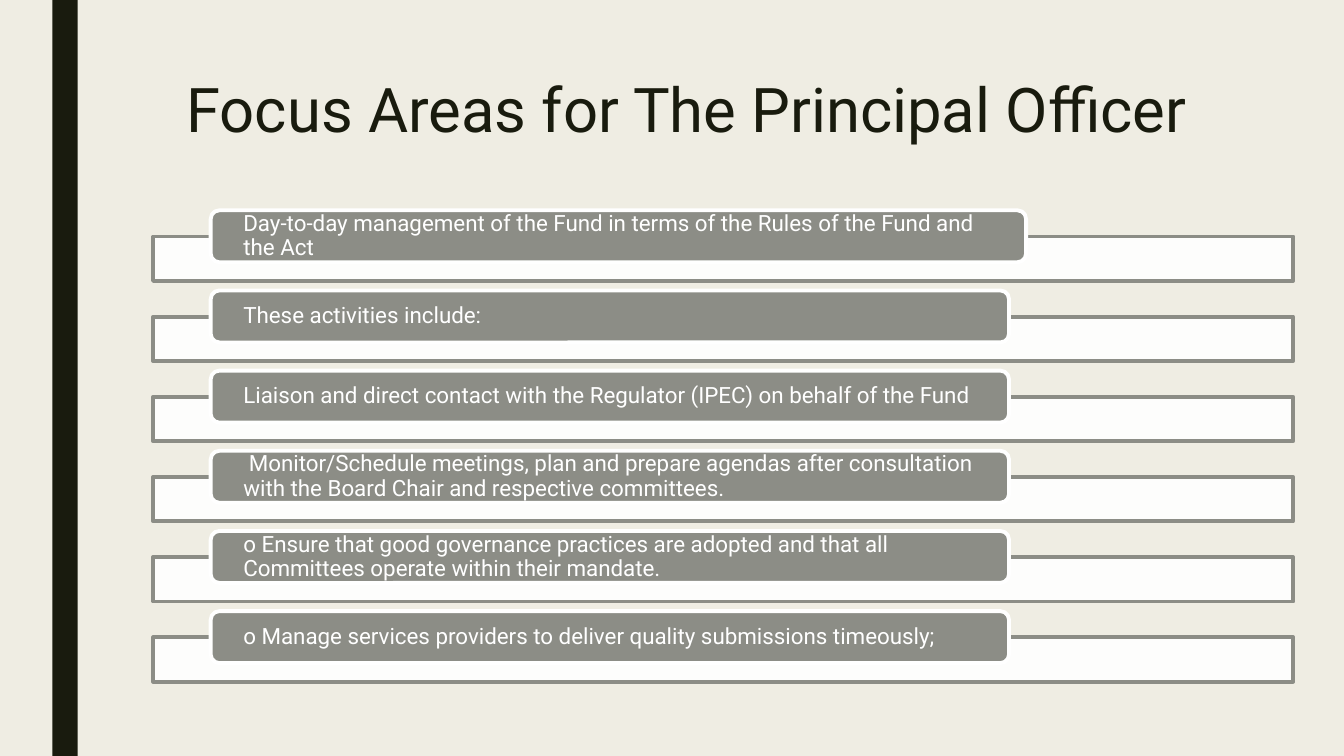
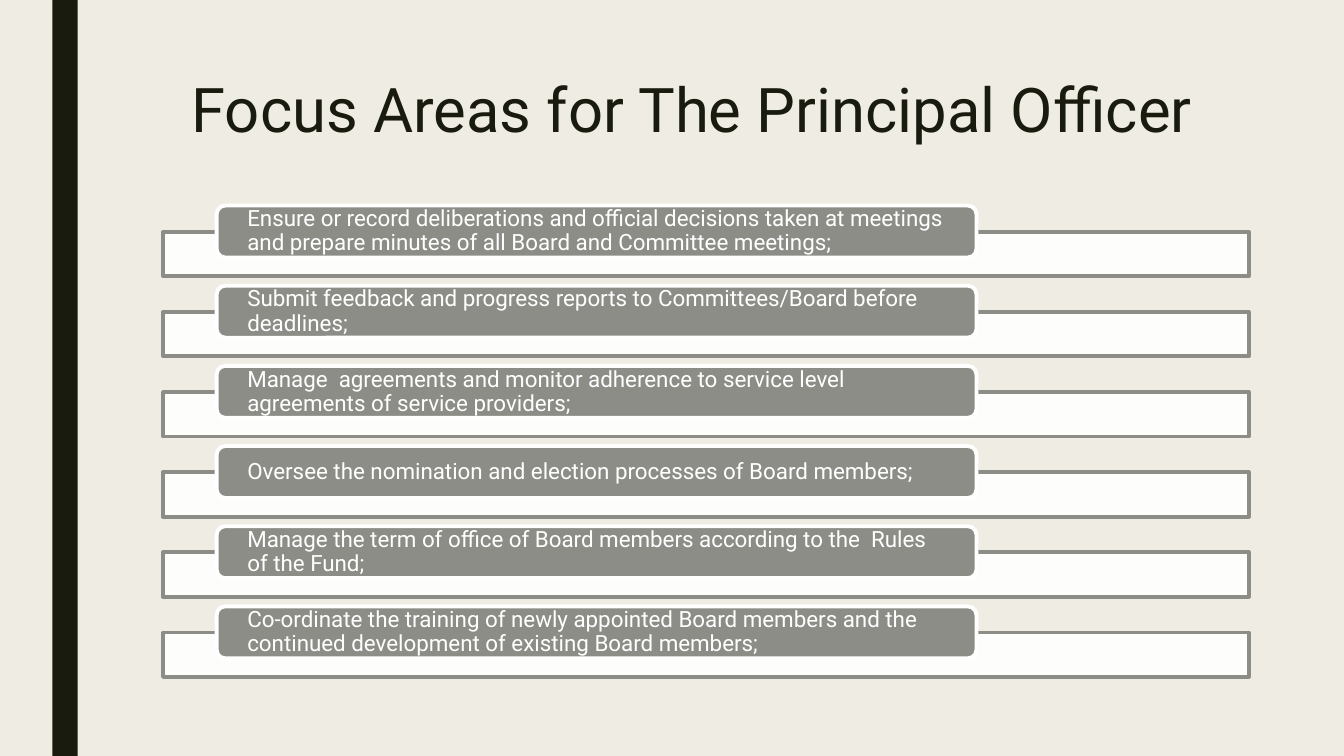
"""Build two slides listing the focus areas of the Principal Officer."""
from dataclasses import dataclass

from lxml.etree import SubElement
from pptx import Presentation
from pptx.dml.color import RGBColor
from pptx.enum.shapes import MSO_SHAPE as Preset
from pptx.enum.text import MSO_ANCHOR as Anchor, PP_ALIGN as Align
from pptx.oxml.ns import qn
from pptx.util import Cm, Pt

FONT = "Roboto"
CREAM, DARK, GRAY, WHITE = "EFEDE3", "191B0E", "8C8D86", "FFFFFF"
PAGE_WIDTH, PAGE_HEIGHT = 33.87, 19.05
ROW_PITCH, BAR_HEIGHT = 2.02, 1.12
LABEL_HEIGHT, LABEL_RISE = 1.31, 0.66
OUTLINE = 2.75
TITLE = "Focus Areas for The Principal Officer"


@dataclass(frozen=True)
class Box:
    left: float
    top: float
    width: float
    height: float

    def lengths(self):
        return [Cm(value) for value in (self.left, self.top, self.width, self.height)]


@dataclass(frozen=True)
class Row:
    text: str
    label_width: float


@dataclass(frozen=True)
class FocusPage:
    title_box: Box
    title_align: Align
    first_bar: Box
    label_left: float
    label_inset: float
    rows: tuple[Row, ...]


PAGES = (
    FocusPage(
        title_box=Box(4.45, 1.9, 26.04, 3.05),
        title_align=Align.LEFT,
        first_bar=Box(3.86, 5.96, 28.73, BAR_HEIGHT),
        label_left=5.31,
        label_inset=0.76,
        rows=(
            Row("Day-to-day management of the Fund in terms of the Rules of the Fund and the Act", 20.55),
            Row("These activities include:", 20.12),
            Row("Liaison and direct contact with the Regulator (IPEC) on behalf of the Fund", 20.12),
            Row(" Monitor/Schedule meetings, plan and prepare agendas after consultation "
                "with the Board Chair and respective committees.", 20.12),
            Row("o Ensure that good governance practices are adopted and that all "
                "Committees operate within their mandate.", 20.12),
            Row("o Manage services providers to deliver quality submissions timeously;", 20.12),
        ),
    ),
    FocusPage(
        title_box=Box(4.42, 1.9, 26.06, 2.29),
        title_align=Align.CENTER,
        first_bar=Box(4.11, 5.84, 27.36, BAR_HEIGHT),
        label_left=5.46,
        label_inset=0.71,
        rows=(
            Row("Ensure or record deliberations and official decisions taken at meetings "
                "and prepare minutes of all Board and Committee meetings;", 19.15),
            Row("Submit feedback and progress reports to Committees/Board before deadlines;", 19.15),
            Row("Manage  agreements and monitor adherence to service level "
                "agreements of service providers;", 19.15),
            Row("Oversee the nomination and election processes of Board members;", 19.15),
            Row("Manage the term of office of Board members according to the  Rules of the Fund;", 19.15),
            Row("Co-ordinate the training of newly appointed Board members and the "
                "continued development of existing Board members;", 19.15),
        ),
    ),
)


def paint(fill, color: str, opacity: int = 100) -> None:
    fill.solid()
    fill.fore_color.rgb = RGBColor.from_string(color)
    if opacity < 100:
        tone = fill.fore_color._xFill.find(qn("a:srgbClr"))
        SubElement(tone, qn("a:alpha"), val=str(opacity * 1000))


def set_format(target, values: dict) -> None:
    for name, value in values.items():
        setattr(target, name, value)


def write(shape, text: str, size: int, color: str, spacing: float,
          align: Align, frame_format: dict) -> None:
    frame = shape.text_frame
    set_format(frame, {"word_wrap": True, **frame_format})
    para = frame.paragraphs[0]
    set_format(para, {"alignment": align, "line_spacing": spacing})
    span = para.add_run()
    span.text = text
    set_format(span.font, {"name": FONT, "size": Pt(size)})
    paint(span.font.fill, color)


def add_panel(page, preset: Preset, box: Box, color: str,
              outline: str | None = None, opacity: int = 100):
    panel = page.shapes.add_shape(preset, *box.lengths())
    panel.shadow.inherit = False
    paint(panel.fill, color, opacity)
    if outline:
        paint(panel.line.fill, outline)
        panel.line.width = Pt(OUTLINE)
    else:
        panel.line.fill.background()
    return panel


def add_row(page, content: FocusPage, index: int, row: Row) -> None:
    first = content.first_bar
    top = first.top + index * ROW_PITCH
    bar = Box(first.left, top, first.width, first.height)
    add_panel(page, Preset.RECTANGLE, bar, WHITE, GRAY, opacity=90)
    label_box = Box(content.label_left, top - LABEL_RISE, row.label_width, LABEL_HEIGHT)
    label = add_panel(page, Preset.ROUNDED_RECTANGLE, label_box, GRAY, WHITE)
    inset = Cm(content.label_inset)
    write(label, row.text, 16, WHITE, 0.9, Align.LEFT, {
        "vertical_anchor": Anchor.MIDDLE,
        "margin_left": inset, "margin_right": inset,
        "margin_top": 0, "margin_bottom": 0,
    })


def add_page(deck, content: FocusPage) -> None:
    page = deck.slides.add_slide(deck.slide_layouts[6])
    add_panel(page, Preset.RECTANGLE, Box(1.32, 0, 0.64, PAGE_HEIGHT), DARK)
    title = page.shapes.add_textbox(*content.title_box.lengths())
    write(title, TITLE, 44, DARK, 0.89, content.title_align, {"vertical_anchor": Anchor.TOP})
    for index, row in enumerate(content.rows):
        add_row(page, content, index, row)


def main() -> None:
    deck = Presentation()
    set_format(deck, {"slide_width": Cm(PAGE_WIDTH), "slide_height": Cm(PAGE_HEIGHT)})
    paint(deck.slide_master.background.fill, CREAM)
    for content in PAGES:
        add_page(deck, content)
    deck.save("out.pptx")


if __name__ == "__main__":
    main()
